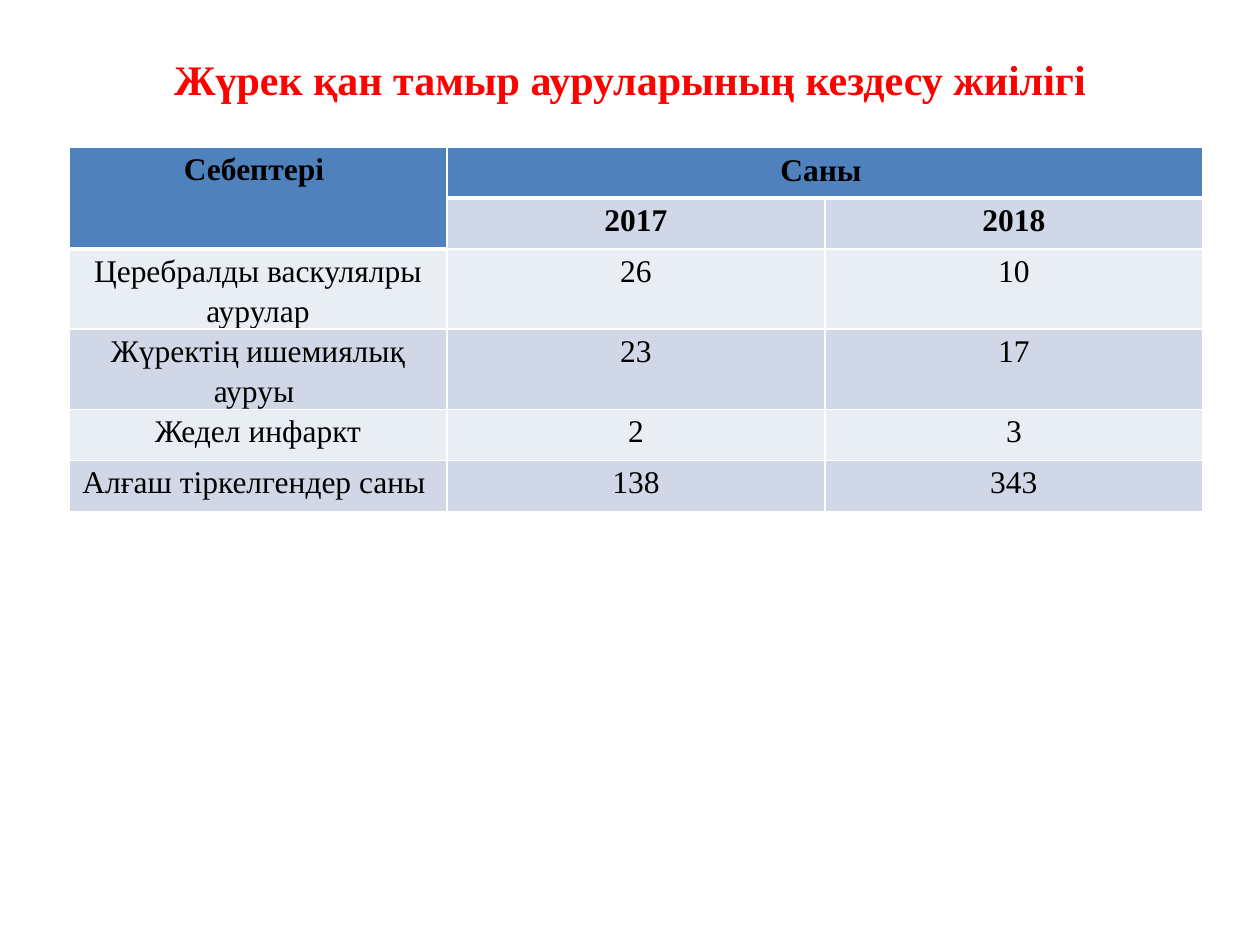
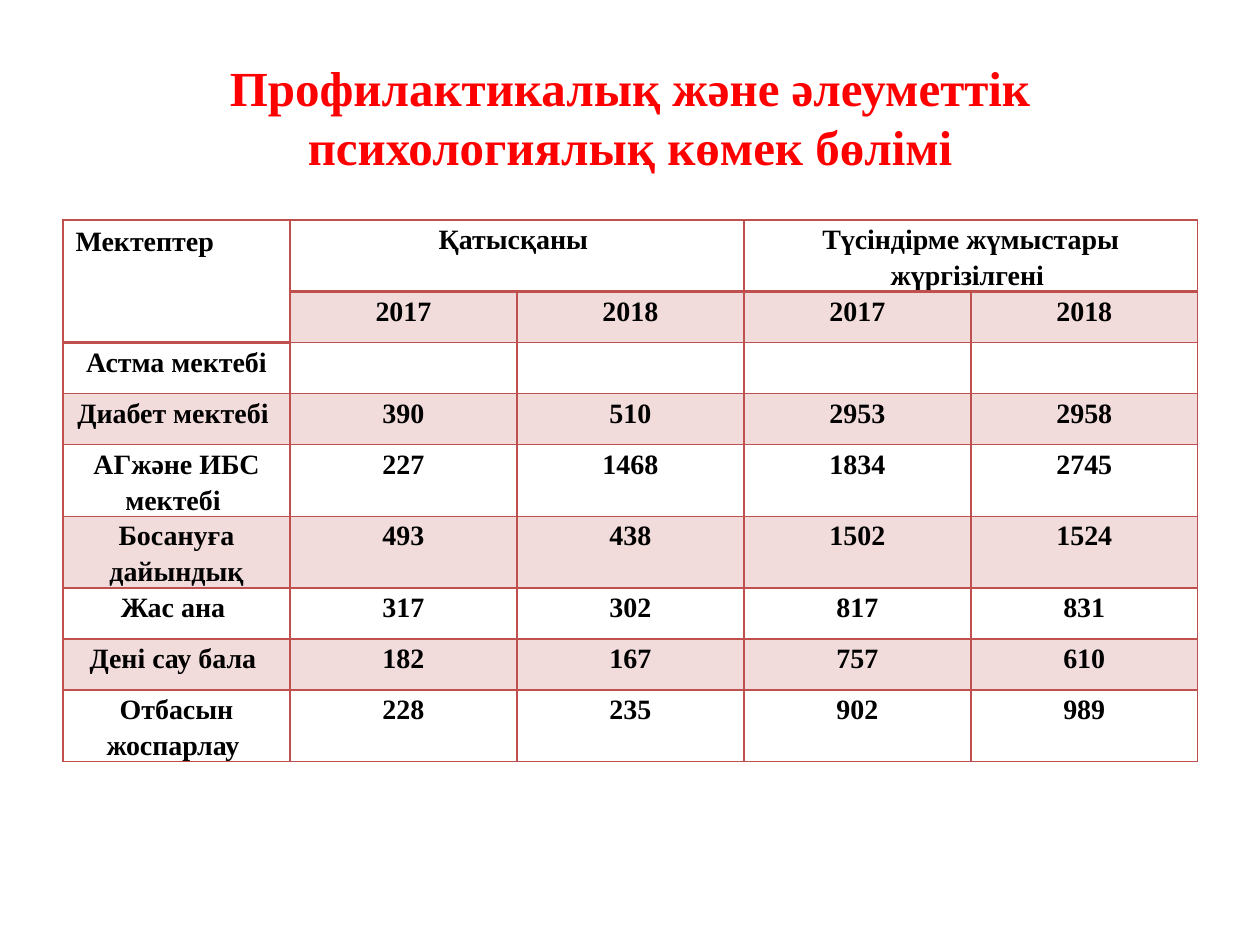
from lxml import etree
from pptx import Presentation
from pptx.dml.color import RGBColor
from pptx.enum.text import MSO_ANCHOR, PP_ALIGN
from pptx.oxml.ns import qn
from pptx.util import Pt

LEFT, CENTER, MIDDLE = PP_ALIGN.LEFT, PP_ALIGN.CENTER, MSO_ANCHOR.MIDDLE
PX = 914400 // 126
FONT, RED, BLACK = "Times New Roman", "FF0000", "000000"
ROW = 51

# Content: None marks a cell covered by a merged one
SLIDES = [
    dict(
        title="Жүрек қан тамыр ауруларының кездесу жиілігі",
        box=(63, 38, 1134, 81), head=24,
        left=69, top=147, wide=378, size=18, inset=9, bold=False,
        line="FFFFFF", heavy=3, fills=("4F81BD", "D0D8E8", "E9EDF4"), alpha=100,
        spans=[(0, 0, 1, 0), (0, 1, 0, 2)],
        plain={(0, 1): CENTER},
        rows=[
            ["Себептері ", "Саны ", None],
            [None, "2017", "2018"],
            ["Церебралды васкулялры аурулар", "26", "10"],
            ["Жүректің ишемиялық ауруы ", "23", "17"],
            ["Жедел инфаркт", "2", "3"],
            ["Алғаш тіркелгендер саны ", "138", "343"],
        ],
    ),
    dict(
        title="Профилактикалық және әлеуметтік психологиялық көмек бөлімі",
        box=(63, 38, 1134, 157), head=28,
        left=63, top=220, wide=227, size=16, inset=5, bold=True,
        line="C0504D", heavy=2, fills=(None, "C0504D", None), alpha=20,
        spans=[(0, 0, 1, 0), (0, 1, 0, 2), (0, 3, 0, 4)],
        plain={(0, 0): LEFT},
        rows=[
            ["Мектептер", "Қатысқаны ", None, "Түсіндірме жүмыстары жүргізілгені ", None],
            [None, "2017", "2018", "2017", "2018"],
            ["Астма мектебі", "", "", "", ""],
            ["Диабет мектебі ", "390", "510", "2953", "2958"],
            ["АГжәне ИБС мектебі ", "227", "1468", "1834", "2745"],
            ["Босануға дайындық", "493", "438", "1502", "1524"],
            ["Жас ана ", "317", "302", "817", "831"],
            ["Дені сау бала ", "182", "167", "757", "610"],
            ["Отбасын жоспарлау ", "228", "235", "902", "989"],
        ],
    ),
]


def color(code):
    return RGBColor.from_string(code)


def style(para, size, code, bold, align):
    para.alignment = align
    font = para.font
    font.name, font.size, font.bold = FONT, Pt(size), bold
    font.color.rgb = color(code)


def paint(cell, code, alpha):
    if code is None:
        cell.fill.background()
        return
    cell.fill.solid()
    cell.fill.fore_color.rgb = color(code)
    if alpha < 100:
        tint = cell._tc.tcPr.find(".//" + qn("a:srgbClr"))
        etree.SubElement(tint, qn("a:alpha"), val=str(alpha * 1000))


def border(cell, code, widths):
    """Draw the left, right, top and bottom edges, ahead of the fill."""
    props = cell._tc.get_or_add_tcPr()
    for i, (side, width) in enumerate(zip("LRTB", widths)):
        edge = etree.Element(qn("a:ln" + side), w=str(Pt(width)))
        fill = etree.SubElement(edge, qn("a:solidFill"))
        etree.SubElement(fill, qn("a:srgbClr"), val=code)
        props.insert(i, edge)


def add_title(slide, data):
    title = slide.shapes.title
    title.left, title.top, title.width, title.height = (n * PX for n in data["box"])
    frame = title.text_frame
    frame.text = data["title"]
    frame.word_wrap, frame.vertical_anchor = True, MIDDLE
    style(frame.paragraphs[0], data["head"], RED, True, CENTER)


def add_grid(slide, data):
    rows, wide = data["rows"], data["wide"]
    count, cols = len(rows), len(rows[0])
    table = slide.shapes.add_table(
        count, cols, data["left"] * PX, data["top"] * PX,
        cols * wide * PX, count * ROW * PX).table
    table.first_row = table.horz_banding = False
    head, dark, light = data["fills"]

    for r, row in enumerate(rows):
        for c, text in enumerate(row):
            cell = table.cell(r, c)
            # The first column's header is two rows deep
            last = 1 if c == 0 else 0
            code = head if r <= last else dark if r % 2 else light
            paint(cell, code, data["alpha"])
            low = data["heavy"] if r == last else 1
            high = data["heavy"] if r == last + 1 else 1
            border(cell, data["line"], (1, 1, high, low))
            if not text:
                continue
            cell.text = text
            para = cell.text_frame.paragraphs[0]
            align = data["plain"].get((r, c), CENTER)
            style(para, data["size"], BLACK, data["bold"] or r < 2, align)
            if (r, c) not in data["plain"]:
                para.line_spacing = 1.15
                cell.margin_left = cell.margin_right = data["inset"] * PX
                cell.margin_top = cell.margin_bottom = 0

    for top, left, low, right in data["spans"]:
        table.cell(top, left).merge(table.cell(low, right))


def main():
    deck = Presentation()
    deck.slide_width, deck.slide_height = 1260 * PX, 945 * PX
    for data in SLIDES:
        slide = deck.slides.add_slide(deck.slide_layouts[5])
        add_title(slide, data)
        add_grid(slide, data)
    deck.save("out.pptx")


if __name__ == "__main__":
    main()
